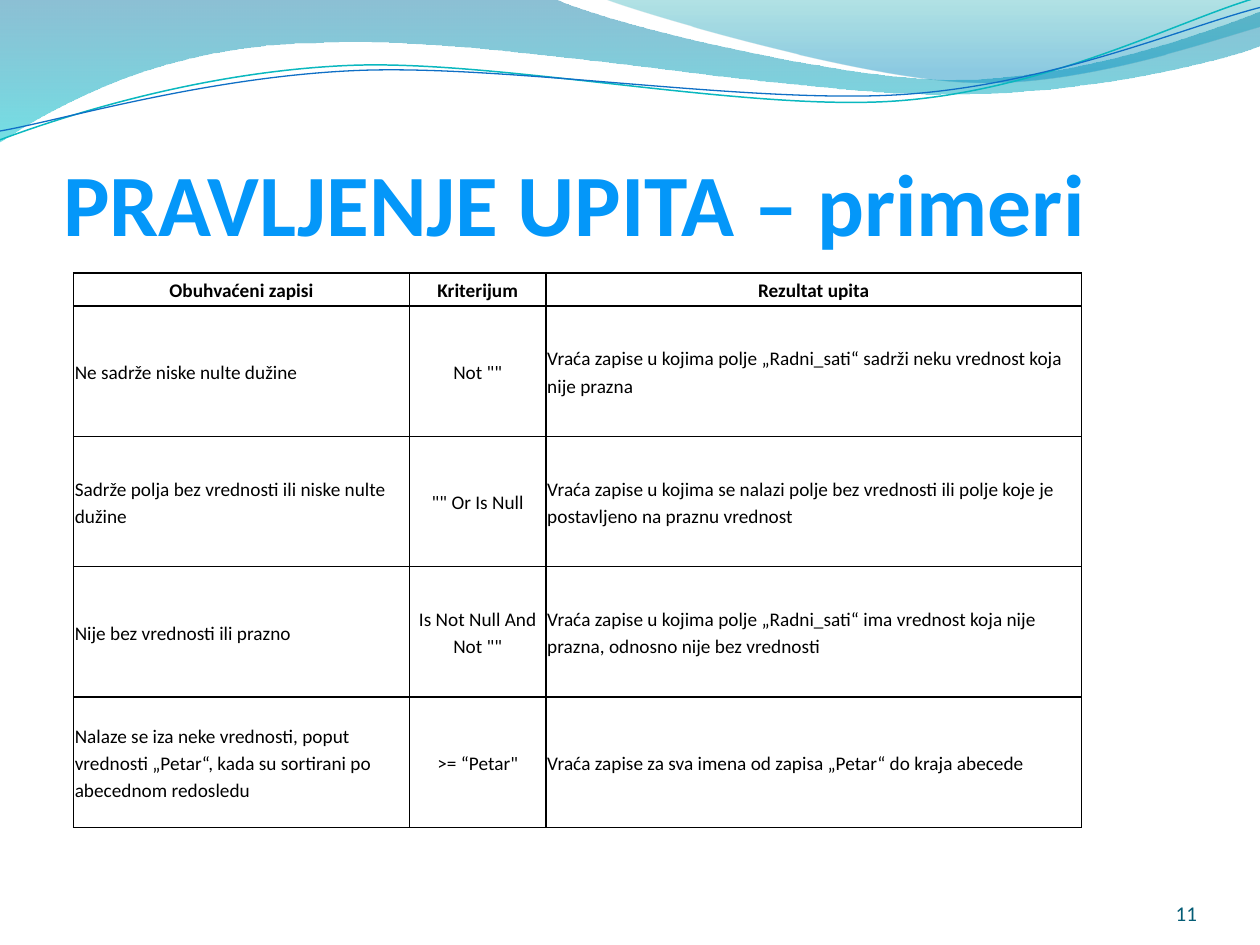
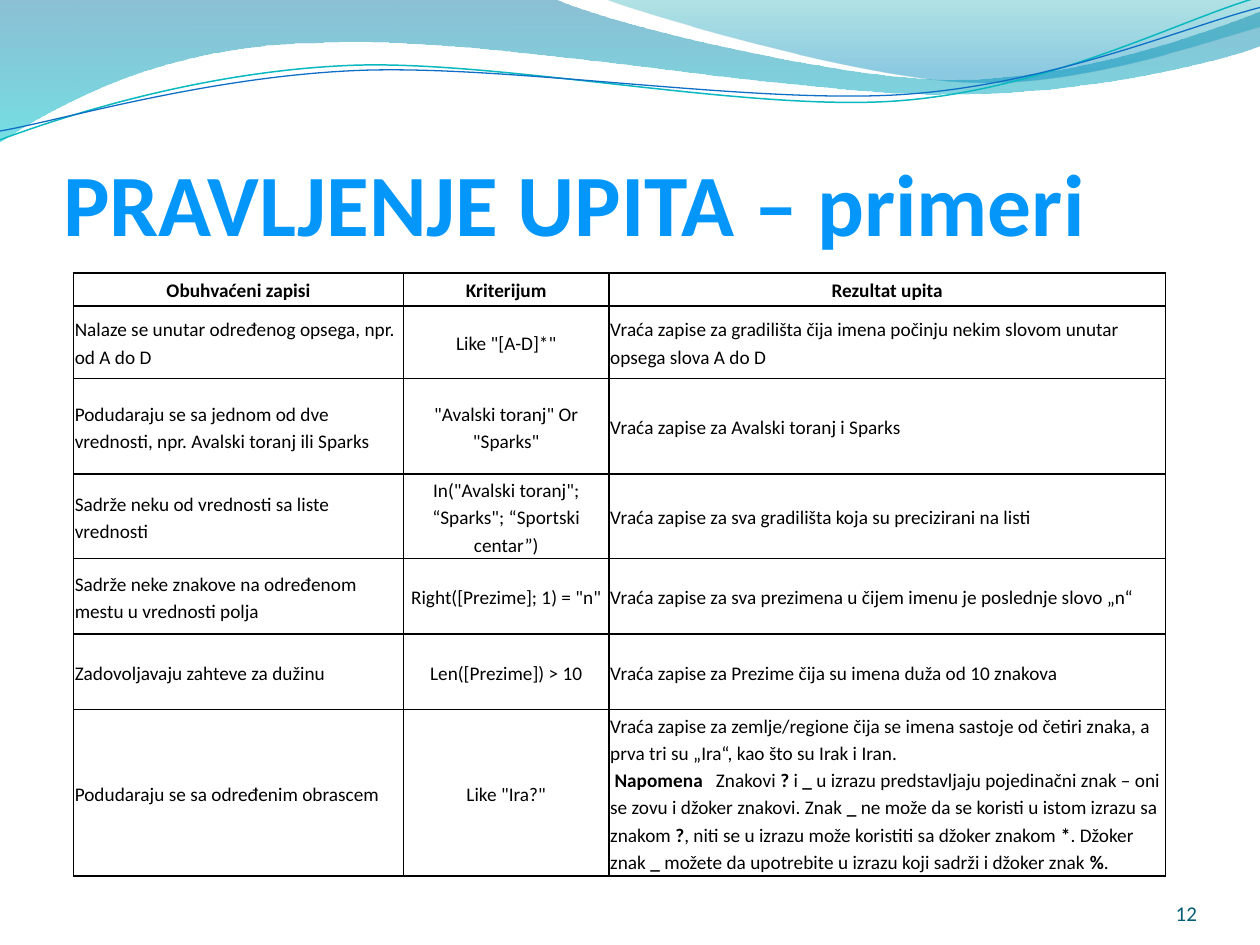
"""Build two slides of query examples under a wave header."""
import math
from dataclasses import dataclass

from lxml import etree
from pptx import Presentation
from pptx import util as u
from pptx.dml import color as c
from pptx.enum import text as t
from pptx.oxml import ns

FONT = "Calibri"
BLACK = c.RGBColor(0x00, 0x00, 0x00)
NAVY = c.RGBColor(0x04, 0x5C, 0x75)
DEEP = c.RGBColor(0x00, 0x74, 0xA1)
AQUA = c.RGBColor(0x00, 0xC6, 0xCF)
TEAL = c.RGBColor(0x00, 0xA1, 0xA9)
SEA = c.RGBColor(0x00, 0x8B, 0xBF)
CYAN = c.RGBColor(0x0A, 0xB8, 0xBF)
BLUE = c.RGBColor(0x0F, 0x6F, 0xC6)
PALE = c.RGBColor(0x7D, 0xC4, 0xFF)
SKY = c.RGBColor(0x04, 0x97, 0xF9)

TILT = 2.7
TITLE = "PRAVLJENJE UPITA – primeri"
HEADS = ("Obuhvaćeni zapisi", "Kriterijum", "Rezultat upita")


@dataclass(frozen=True)
class Stop:
    at: int
    tint: c.RGBColor
    alpha: int = 100


@dataclass(frozen=True)
class Wave:
    start: tuple[float, float]
    legs: tuple[tuple[float, ...], ...]
    stops: tuple[Stop, ...] = ()
    tint: c.RGBColor = BLUE
    width: float = 0
    hub: tuple[float, float] = (0, 0)


@dataclass(frozen=True)
class Page:
    number: int
    cols: tuple[float, ...]
    rows: tuple[float, ...]
    lines: tuple[tuple[str, str, str], ...]


WAVES = (
    Wave((0, -0.7),
         ((316.8, -0.7),
          (342.7, 12.2, 478.1, 45.4, 545.8, 45.4),
          (614.2, 45.4, 689.8, 18.7, 720, 6.5),
          (720.7, 25.9),
          (707.8, 31.7, 626.4, 54.7, 537.1, 54),
          (447.8, 54, 275, 20.2, 185, 24.5),
          (92.9, 25.2, 33.1, 59.8, -0.7, 81.4),
          (0, -0.7)),
         stops=(Stop(0, DEEP, 45), Stop(100, AQUA, 55))),
    Wave((344.9, -0.7),
         ((366.5, 7.9, 491, 44.6, 553.7, 46.8),
          (616.3, 49.7, 691.9, 23, 720, 15.1),
          (720, 0),
          (344.9, -0.7)),
         stops=(Stop(0, TEAL, 30), Stop(80, SEA, 45))),
    Wave((0, 79.9),
         ((34.6, 67, 113.8, 41, 199.4, 37.4),
          (284.4, 33.8, 427, 64.1, 513.4, 57.6),
          (599.8, 51.1, 675.4, 10.8, 718.6, -1.4)),
         tint=CYAN, width=0.85, hub=(359.3, 41.4)),
    Wave((0, 74.9),
         ((33.8, 69.1, 118.1, 43.9, 203.8, 40.3),
          (290.2, 36.7, 429.8, 59.8, 516.2, 54),
          (601.9, 48.2, 677.5, 15.1, 720, 4.3)),
         tint=BLUE, width=0.75, hub=(359.6, 42.5)),
)

PAGES = (
    Page(11, (192, 78, 306), (18.9,) + (74.5,) * 4, (
        ("Ne sadrže niske nulte dužine", 'Not ""',
         "Vraća zapise u kojima polje „Radni_sati“ sadrži neku vrednost koja nije prazna"),
        ("Sadrže polja bez vrednosti ili niske nulte dužine", '"" Or Is Null',
         "Vraća zapise u kojima se nalazi polje bez vrednosti ili polje koje je "
         "postavljeno na praznu vrednost"),
        ("Nije bez vrednosti ili prazno", 'Is Not Null And Not ""',
         "Vraća zapise u kojima polje „Radni_sati“ ima vrednost koja nije prazna, "
         "odnosno nije bez vrednosti"),
        ("Nalaze se iza neke vrednosti, poput vrednosti „Petar“, kada su sortirani "
         "po abecednom redosledu", '>= “Petar"',
         "Vraća zapise za sva imena od zapisa „Petar“ do kraja abecede"),
    )),
    Page(12, (188.6, 117.4, 317.9), (18.9, 41.4, 54.7, 46.8) + (43.2,) * 3, (
        ("Nalaze se unutar određenog opsega, npr. od A do D", 'Like "[A-D]*"',
         "Vraća zapise za gradilišta čija imena počinju nekim slovom unutar "
         "opsega slova A do D"),
        ("Podudaraju se sa jednom od dve vrednosti, npr. Avalski toranj ili Sparks",
         '"Avalski toranj" Or "Sparks"', "Vraća zapise za Avalski toranj i Sparks"),
        ("Sadrže neku od vrednosti sa liste vrednosti",
         'In("Avalski toranj"; “Sparks"; “Sportski centar”)',
         "Vraća zapise za sva gradilišta koja su precizirani na listi"),
        ("Sadrže neke znakove na određenom mestu u vrednosti polja",
         'Right([Prezime]; 1) = "n"',
         "Vraća zapise za sva prezimena u čijem imenu je poslednje slovo „n“"),
        ("Zadovoljavaju zahteve za dužinu", "Len([Prezime]) > 10",
         "Vraća zapise za Prezime čija su imena duža od 10 znakova"),
        ("Podudaraju se sa određenim obrascem", 'Like "Ira?"',
         "Vraća zapise za zemlje/regione čija se imena sastoje od četiri znaka, a prva "
         "tri su „Ira“, kao što su Irak i Iran.\n"
         "| Napomena |  Znakovi |?| i |_| u izrazu predstavljaju pojedinačni znak – oni "
         "se zovu i džoker znakovi. Znak |_| ne može da se koristi u istom izrazu sa "
         "znakom |?|, niti se u izrazu može koristiti sa džoker znakom |*|. Džoker "
         "znak |_| možete da upotrebite u izrazu koji sadrži i džoker znak |%|."),
    )),
)


def node(host, tag: str, **attrs) -> etree.Element:
    return etree.SubElement(host, ns.qn(tag), {k: str(v) for k, v in attrs.items()})


def blend(host, place: int, stops: tuple[Stop, ...]) -> None:
    grad = node(host, "a:gradFill", rotWithShape=1)
    items = node(grad, "a:gsLst")
    for stop in stops:
        point = node(items, "a:gs", pos=stop.at * 1000)
        tint = node(point, "a:srgbClr", val=stop.tint)
        if stop.alpha < 100:
            node(tint, "a:alpha", val=stop.alpha * 1000)
    node(grad, "a:lin", ang=5400000, scaled=0)
    host.insert(place, grad)


def turn(spot: tuple[float, float], wave: Wave) -> tuple[int, int]:
    angle = math.radians(TILT if wave.width else 0)
    (x, y), (a, b) = spot, wave.hub
    return (u.Pt(a + (x - a) * math.cos(angle) - (y - b) * math.sin(angle)),
            u.Pt(b + (x - a) * math.sin(angle) + (y - b) * math.cos(angle)))


def bend(shape, wave: Wave) -> None:
    route = next(shape._element.iter(ns.qn("a:path")))
    marks = iter(route.findall(ns.qn("a:lnTo")))
    for leg in wave.legs:
        line = next(marks)
        if len(leg) == 6:
            line.addprevious(curve := node(route, "a:cubicBezTo"))
            for mark in (line, next(marks), next(marks)):
                curve.append(mark[0])
                route.remove(mark)


def draw(slide, wave: Wave):
    spots = [leg[k:k + 2] for leg in wave.legs for k in range(0, len(leg), 2)]
    pen = slide.shapes.build_freeform(*turn(wave.start, wave))
    pen.add_line_segments([turn(spot, wave) for spot in spots], close=bool(wave.stops))
    shape = pen.convert_to_shape()
    bend(shape, wave)
    if wave.stops:
        blend(shape._element.spPr, 2, wave.stops)
        shape.line.fill.background()
    else:
        shape.rotation = 360 - TILT
        shape.fill.background()
        shape.line.color.rgb = wave.tint
        shape.line.width = u.Pt(wave.width)
    shape.shadow.inherit = False
    return shape


def crest(deck, slide) -> None:
    tree = deck.slide_master.shapes._spTree
    for k, wave in enumerate(WAVES):
        item = draw(slide, wave)._element
        item.nvSpPr.cNvPr.set("id", str(20 + k))
        tree.insert(2 + k, item)


def write(para, words: str, size: float, tint: c.RGBColor | None, bold: bool = False):
    run = para.add_run()
    run.text = words
    run.font.name, run.font.size, run.font.bold = FONT, u.Pt(size), bold
    if tint is not None:
        run.font.color.rgb = tint
    return run


def frame(shape, foot: float = 0):
    box = shape.text_frame
    box.word_wrap = True
    box.auto_size = t.MSO_AUTO_SIZE.NONE
    box.vertical_anchor = t.MSO_ANCHOR.BOTTOM
    box.margin_left = box.margin_top = box.margin_right = 0
    box.margin_bottom = u.Pt(foot)
    return box.paragraphs[0]


def head(slide) -> None:
    shape = slide.shapes.title
    shape.left, shape.top, shape.width, shape.height = map(u.Pt, (36, 55.4, 648, 90))
    para = frame(shape)
    shape.text_frame.margin_top = u.Pt(3.6)
    para.alignment = t.PP_ALIGN.LEFT
    run = write(para, TITLE, 50, None, True)
    blend(run._r.get_or_add_rPr(), 0, (Stop(0, PALE), Stop(75, SKY), Stop(100, DEEP)))


def foot(slide, number: int) -> None:
    para = frame(slide.shapes.add_textbox(*map(u.Pt, (624, 500.4, 60, 28.8))))
    para.alignment = t.PP_ALIGN.RIGHT
    write(para, str(number), 12, NAVY)


def edge(cell) -> None:
    props = cell._tc.get_or_add_tcPr()
    for side in "LRTB":
        line = node(props, f"a:ln{side}", w=u.Pt(1))
        node(node(line, "a:solidFill"), "a:srgbClr", val=BLACK)


def fill(cell, words: str, top: bool, mid: bool) -> None:
    edge(cell)
    cell.fill.background()
    cell.vertical_anchor = t.MSO_ANCHOR.MIDDLE
    cell.margin_left = cell.margin_right = u.Pt(0.72)
    cell.margin_top = cell.margin_bottom = u.Pt(0.72)
    para = cell.text_frame.paragraphs[0]
    para.alignment = t.PP_ALIGN.CENTER if mid else t.PP_ALIGN.LEFT
    para.line_spacing = 1.15
    para.space_after = u.Pt(10)
    for k, part in enumerate(words.split("|")):
        for n, piece in enumerate(part.split("\n")):
            if n:
                para.add_line_break()
            if piece:
                write(para, piece, 11, BLACK, top or k % 2 == 1)


def grid(slide, page: Page) -> None:
    size = (42, 156, sum(page.cols), sum(page.rows))
    table = slide.shapes.add_table(len(page.rows), len(page.cols), *map(u.Pt, size)).table
    table.first_row = table.horz_banding = False
    for col, width in zip(table.columns, page.cols):
        col.width = u.Pt(width)
    for r, (row, height) in enumerate(zip(table.rows, page.rows)):
        row.height = u.Pt(height)
        for k, words in enumerate((HEADS, *page.lines)[r]):
            fill(table.cell(r, k), words, r == 0, r == 0 or k == 1)


def main() -> None:
    deck = Presentation()
    deck.slide_width, deck.slide_height = u.Pt(720), u.Pt(540)
    for page in PAGES:
        slide = deck.slides.add_slide(deck.slide_layouts[5])
        if page is PAGES[0]:
            crest(deck, slide)
        head(slide)
        foot(slide, page.number)
        grid(slide, page)
    deck.save("out.pptx")


if __name__ == "__main__":
    main()
